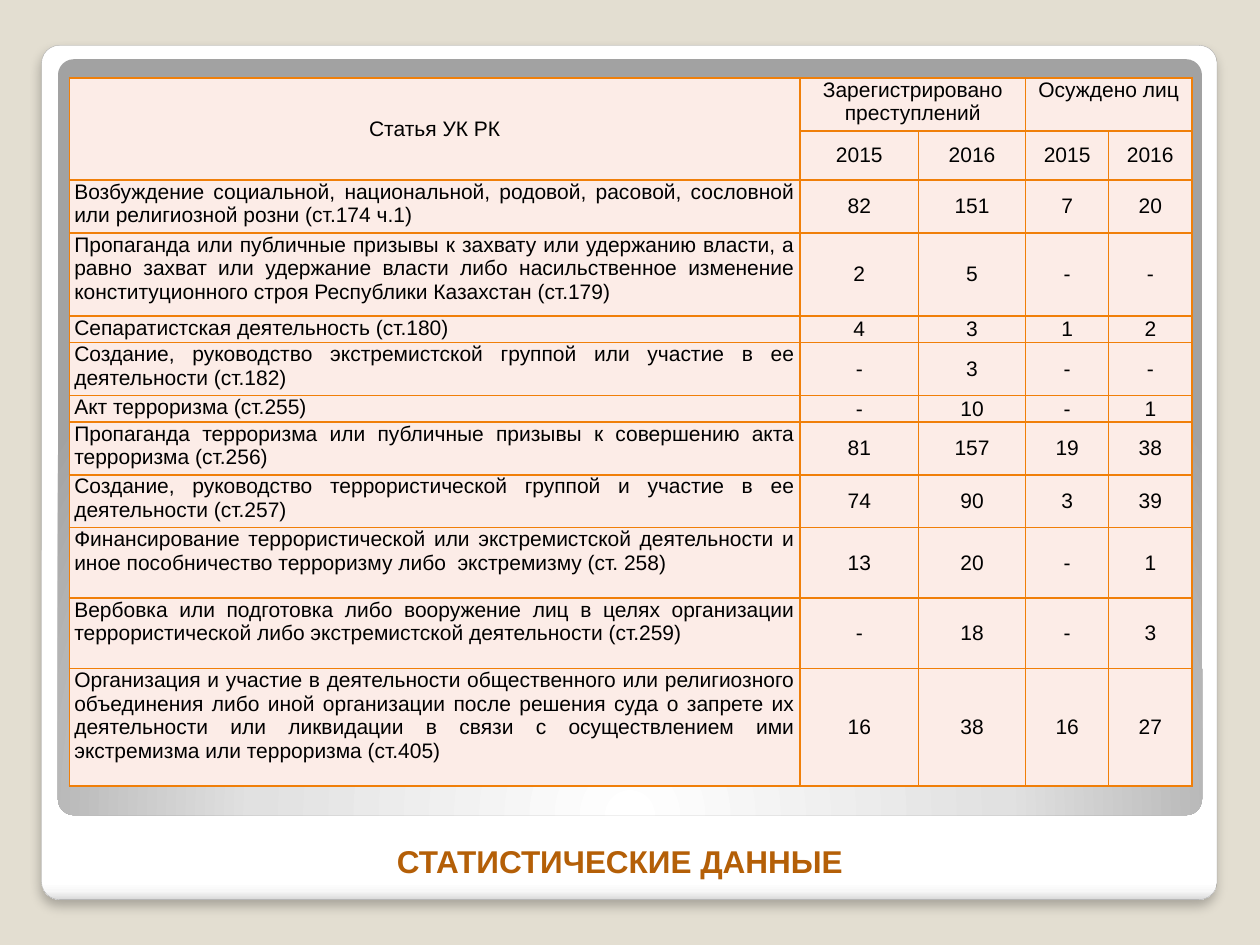
from lxml import etree
from pptx import Presentation
from pptx.dml.color import RGBColor
from pptx.enum.shapes import MSO_SHAPE
from pptx.enum.text import MSO_ANCHOR, PP_ALIGN
from pptx.oxml import parse_xml
from pptx.oxml.ns import qn
from pptx.util import Inches, Pt

ROUND = MSO_SHAPE.ROUNDED_RECTANGLE
TOP, MIDDLE = MSO_ANCHOR.TOP, MSO_ANCHOR.MIDDLE
CENTER, JUSTIFY = PP_ALIGN.CENTER, PP_ALIGN.JUSTIFY
NS = 'xmlns:a="http://schemas.openxmlformats.org/drawingml/2006/main"'
ORANGE, PINK = "F07F09", "FCECE7"

COLS = [5.8, 0.94, 0.85, 0.66, 0.66]
ROWS = [0.42, 0.39, 0.42, 0.66, 0.21, 0.42, 0.21, 0.42, 0.42, 0.56, 0.56, 0.93]
HEAD = [
    ("Статья УК РК", "Зарегистрировано преступлений", "", "Осуждено лиц", ""),
    ("", "2015", "2016", "2015", "2016"),
]
DATA = [
    ("Возбуждение социальной, национальной, родовой, расовой, сословной "
     "или религиозной розни (ст.174 ч.1)", "82", "151", "7", "20"),
    ("Пропаганда или публичные призывы к захвату или удержанию власти, а "
     "равно захват или удержание власти либо насильственное изменение "
     "конституционного строя Республики Казахстан (ст.179)", "2", "5", "-", "-"),
    ("Сепаратистская деятельность (ст.180)", "4", "3", "1", "2"),
    ("Создание, руководство экстремистской группой или участие в ее "
     "деятельности (ст.182)", "-", "3", "-", "-"),
    ("Акт терроризма (ст.255)", "-", "10", "-", "1"),
    ("Пропаганда терроризма или публичные призывы к совершению акта "
     "терроризма (ст.256)", "81", "157", "19", "38"),
    ("Создание, руководство террористической группой и участие в ее "
     "деятельности (ст.257)", "74", "90", "3", "39"),
    ("Финансирование террористической или экстремистской деятельности и "
     "иное пособничество терроризму либо  экстремизму (ст. 258)", "13", "20", "-", "1"),
    ("Вербовка или подготовка либо вооружение лиц в целях организации "
     "террористической либо экстремистской деятельности (ст.259)", "-", "18", "-", "3"),
    ("Организация и участие в деятельности общественного или религиозного "
     "объединения либо иной организации после решения суда о запрете их "
     "деятельности или ликвидации в связи с осуществлением ими "
     "экстремизма или терроризма (ст.405)", "16", "38", "16", "27"),
]


def color(code):
    return RGBColor.from_string(code)


def write(frame, text, size=12, ink="000000", bold=False, align=CENTER):
    frame.word_wrap = True
    para = frame.paragraphs[0]
    para.alignment = align
    run = para.add_run()
    run.text = text
    font = run.font
    font.name, font.size, font.bold = "Arial", Pt(size), bold
    font.color.rgb = color(ink)


def add_panel(slide, box, stops, shade):
    """Add a rounded panel with a gradient; shade is the XML of its direction."""
    panel = slide.shapes.add_shape(ROUND, *map(Inches, box))
    panel.adjustments[0] = 0.021
    panel.shadow.inherit = False
    panel.line.fill.background()
    marks = "".join(f'<a:gs pos="{at * 1000}"><a:srgbClr val="{code}"/></a:gs>'
                    for at, code in stops)
    grad = parse_xml(f'<a:gradFill {NS} rotWithShape="1"><a:gsLst>{marks}</a:gsLst>'
                     f'{shade}</a:gradFill>')
    panel.element.spPr.find(qn("a:prstGeom")).addnext(grad)
    return panel


def add_card(slide, box):
    stops = [(0, "FFFFFF"), (98, "FFFFFF"), (99, "F7F7F7"), (100, "DADADA")]
    card = add_panel(slide, box, stops, '<a:lin ang="5400000" scaled="0"/>')
    card.line.color.rgb = color("A4A4A4")
    card.line.width = Pt(0.16)
    # Soft shadow below the card
    glow = card.element.spPr.find(qn("a:effectLst"))
    glow.append(parse_xml(
        f'<a:outerShdw {NS} blurRad="{Pt(6)}" dist="{Pt(4)}" dir="5400000" '
        'algn="t" rotWithShape="0"><a:srgbClr val="000000">'
        '<a:alpha val="25000"/></a:srgbClr></a:outerShdw>'))


def add_frame(slide, box):
    stops = [(0, "FFFFFF"), (55, "E1E1E1"), (100, "A2A2A2")]
    add_panel(slide, box, stops,
              '<a:path path="circle"><a:fillToRect l="50000" t="175000" '
              'r="50000" b="-75000"/></a:path>')


def add_title(slide, box, text):
    title = slide.shapes.title
    title.left, title.top, title.width, title.height = map(Inches, box)
    title.text_frame.vertical_anchor = MIDDLE
    write(title.text_frame, text, size=18, ink="B45F07", bold=True)
    # Bring the title in front of the panels
    title.element.getparent().append(title.element)


def style_cell(cell, anchor):
    cell.margin_left = cell.margin_right = Inches(0.04)
    cell.margin_top = cell.margin_bottom = 0
    cell.vertical_anchor = anchor
    cell.fill.solid()
    cell.fill.fore_color.rgb = color(PINK)
    props = cell._tc.get_or_add_tcPr()
    for spot, side in enumerate(("lnL", "lnR", "lnT", "lnB")):
        edge = etree.Element(qn(f"a:{side}"), w=str(Pt(1)))
        paint = etree.SubElement(edge, qn("a:solidFill"))
        etree.SubElement(paint, qn("a:srgbClr"), val=ORANGE)
        props.insert(spot, edge)


def add_stats(slide, box):
    table = slide.shapes.add_table(len(ROWS), len(COLS), *map(Inches, box)).table
    table.first_row = table.horz_banding = False
    for col, width in zip(table.columns, COLS):
        col.width = Inches(width)
    for row, height in zip(table.rows, ROWS):
        row.height = Inches(height)
    # Header spans
    for first, last in (((0, 0), (1, 0)), ((0, 1), (0, 2)), ((0, 3), (0, 4))):
        table.cell(*first).merge(table.cell(*last))
    # Contents
    for r, line in enumerate(HEAD + DATA):
        for c, text in enumerate(line):
            cell = table.cell(r, c)
            label = c == 0 and r >= len(HEAD)
            group = r == 0 and c > 0
            style_cell(cell, TOP if label or group else MIDDLE)
            if text:
                write(cell.text_frame, text, align=JUSTIFY if label else CENTER)


def main():
    deck = Presentation()
    deck.slide_width, deck.slide_height = Inches(10), Inches(7.5)
    slide = deck.slides.add_slide(deck.slide_layouts[5])
    slide.background.fill.solid()
    slide.background.fill.fore_color.rgb = color("E3DED1")
    add_card(slide, (0.33, 0.36, 9.33, 6.78))
    add_frame(slide, (0.46, 0.47, 9.08, 6))
    add_title(slide, (0.7, 6.63, 8.44, 0.4), "СТАТИСТИЧЕСКИЕ ДАННЫЕ")
    add_stats(slide, (0.55, 0.62, 8.91, 5.63))
    deck.save("out.pptx")


if __name__ == "__main__":
    main()
